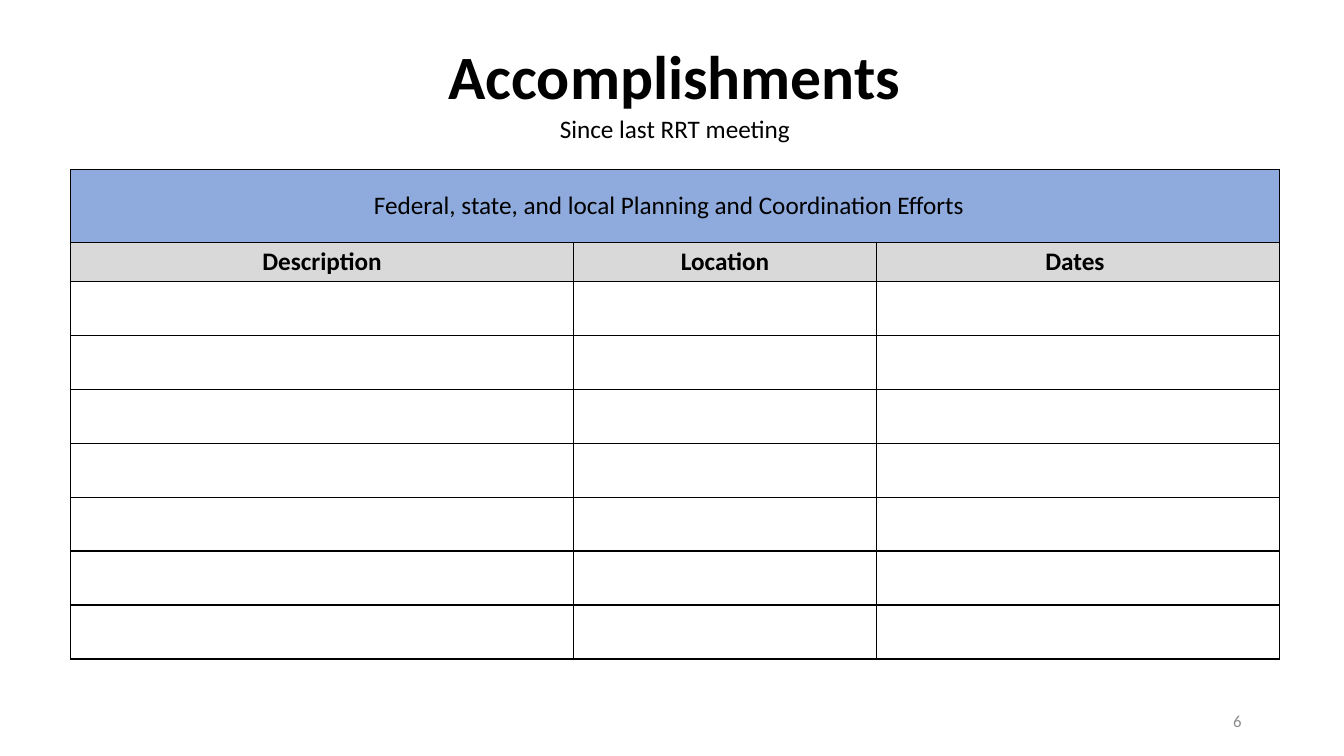
from pptx import Presentation
from pptx.dml.color import RGBColor
from pptx.enum.shapes import MSO_SHAPE as Shape
from pptx.enum.text import MSO_ANCHOR as Anchor, PP_ALIGN as Align
from pptx.oxml import parse_xml
from pptx.oxml.ns import nsdecls
from pptx.util import Cm, Pt

BLACK = RGBColor(0, 0, 0)
WHITE = RGBColor(255, 255, 255)
BLUE = RGBColor(0x8F, 0xAA, 0xDC)
SILVER = RGBColor(0xD9, 0xD9, 0xD9)
GRAY = RGBColor(0x8C, 0x8C, 0x8C)

TITLE = "Accomplishments"
SINCE = "Since last RRT meeting"
BANNER = "Federal, state, and local Planning and Coordination Efforts"
HEADS = ["Description", "Location", "Dates"]
NUMBER = "6"
BLANKS = 7
WIDTHS = [12.67, 7.64, 10.15]
HEIGHTS = [1.83, 0.95] + [1.36] * BLANKS


def write(frame, text, size, color=BLACK, bold=False, align=Align.CENTER):
    frame.text = text
    para = frame.paragraphs[0]
    para.alignment = align
    font = para.runs[0].font
    font.name = "Calibri"
    font.size = Pt(size)
    font.bold = bold
    font.color.rgb = color


def frame_cell(cell):
    props = cell._tc.get_or_add_tcPr()
    for i, side in enumerate(("lnL", "lnR", "lnT", "lnB")):
        props.insert(i, parse_xml(
            f'<a:{side} {nsdecls("a")} w="12700"><a:solidFill>'
            f'<a:srgbClr val="{BLACK}"/></a:solidFill></a:{side}>'))


def add_grid(slide):
    grid = slide.shapes.add_table(
        len(HEIGHTS), len(WIDTHS), Cm(1.78), Cm(4.28),
        Cm(sum(WIDTHS)), Cm(sum(HEIGHTS))).table
    for col, width in zip(grid.columns, WIDTHS):
        col.width = Cm(width)
    for row, height in zip(grid.rows, HEIGHTS):
        row.height = Cm(height)
    fills = [BLUE, SILVER] + [WHITE] * BLANKS
    for row, fill in zip(grid.rows, fills):
        for cell in row.cells:
            cell.fill.solid()
            cell.fill.fore_color.rgb = fill
            cell.vertical_anchor = Anchor.MIDDLE
            cell.margin_left = cell.margin_right = Cm(0.18)
            cell.margin_top = cell.margin_bottom = Cm(0.1)
            frame_cell(cell)
    top = grid.cell(0, 0)
    top.merge(grid.cell(0, len(WIDTHS) - 1))
    top.margin_right = Cm(0.48)
    write(top.text_frame, BANNER, 18)
    for i, head in enumerate(HEADS):
        write(grid.cell(1, i).text_frame, head, 18, bold=True)
    grid.cell(1, 2).margin_right = Cm(0.33)


def main():
    deck = Presentation()
    deck.slide_width, deck.slide_height = Cm(33.87), Cm(19.05)
    slide = deck.slides.add_slide(deck.slide_layouts[5])

    since = slide.shapes.add_shape(
        Shape.RECTANGLE, Cm(13.82), Cm(2.72), Cm(6.38), Cm(1.02))
    since.shadow.inherit = False
    since.fill.solid()
    since.fill.fore_color.rgb = WHITE
    since.line.color.rgb = WHITE
    since.line.width = Pt(1)
    since.text_frame.word_wrap = False
    since.text_frame.vertical_anchor = Anchor.TOP
    write(since.text_frame, SINCE, 18)

    title = slide.shapes.title
    title.left, title.top = Cm(0.07), Cm(0.74)
    title.width, title.height = Cm(33.87), Cm(2.29)
    title.text_frame.vertical_anchor = Anchor.MIDDLE
    write(title.text_frame, TITLE, 44, bold=True)
    since._element.addnext(title._element)

    add_grid(slide)

    number = slide.shapes.add_textbox(
        Cm(23.92), Cm(17.65), Cm(7.62), Cm(1.02)).text_frame
    number.word_wrap = True
    number.vertical_anchor = Anchor.MIDDLE
    write(number, NUMBER, 12, GRAY, align=Align.RIGHT)

    deck.save("out.pptx")


if __name__ == "__main__":
    main()
